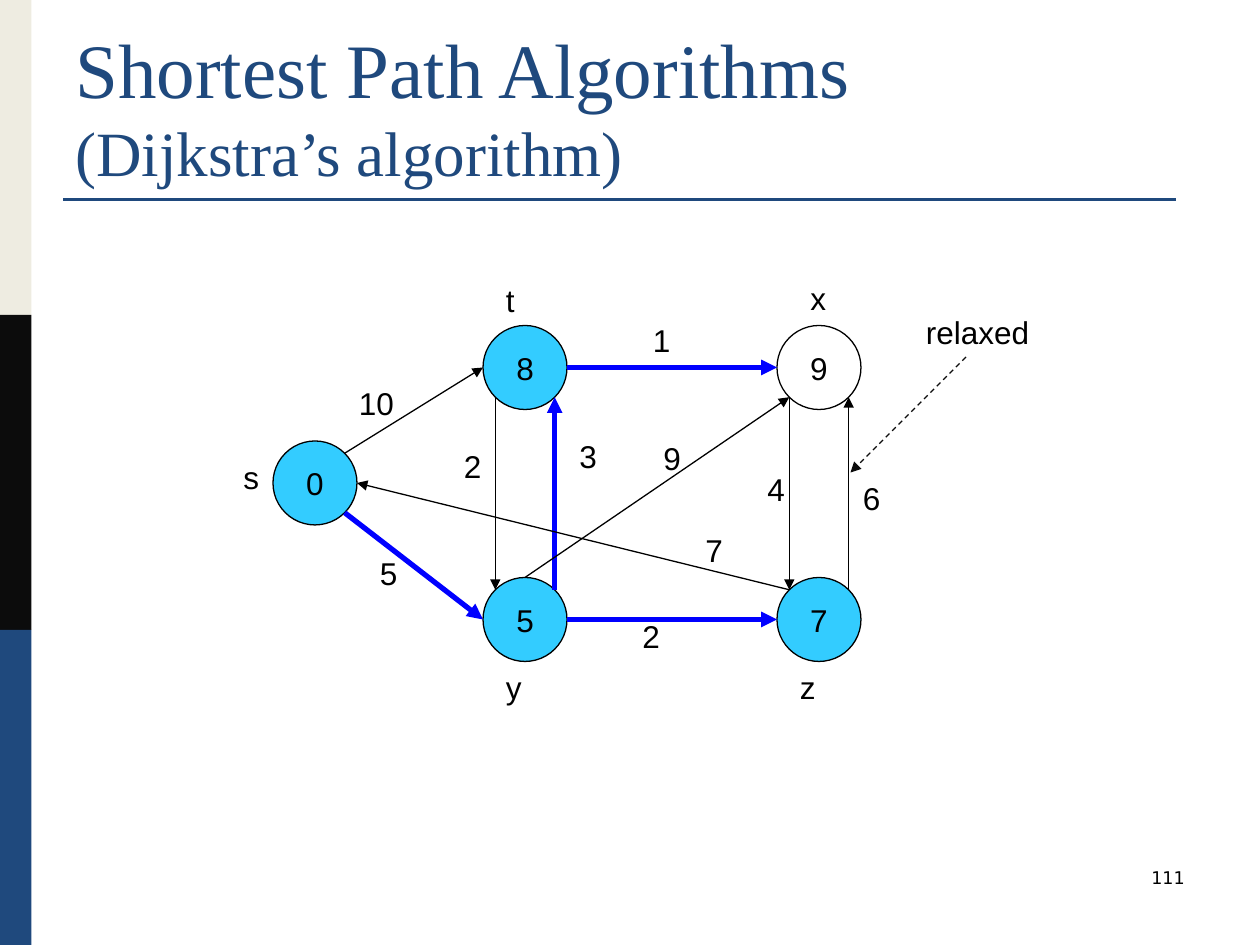
import math

import lxml.etree
import pptx
import pptx.dml.color
import pptx.enum.dml
import pptx.enum.shapes
import pptx.enum.text
import pptx.oxml.ns
import pptx.util

COLORS = {
    "cream": "EEECE1", "ink": "0C0C0C", "navy": "1F497D", "black": "000000",
    "white": "FFFFFF", "visited": "33CCFF", "tree": "0000FF",
}
UNIT = 1 / 12  # one grid step in inches; the page is 120 by 90 steps
RADIUS = 4
ALIGN = pptx.enum.text.PP_ALIGN
ANCHOR = pptx.enum.text.MSO_ANCHOR
SHAPE = pptx.enum.shapes.MSO_SHAPE
ANGLES = {"E": 0, "SE": 45, "S": 90, "SW": 135, "W": 180, "NW": 225, "N": 270, "NE": 315}


def steps(*values):
    return [pptx.util.Inches(value * UNIT) for value in values]


def rgb(name):
    return pptx.dml.color.RGBColor.from_string(COLORS[name])


class GraphSlide:
    def __init__(self, deck, font="Arial", size=18):
        self.font, self.size = font, size
        self.page = deck.slides.add_slide(deck.slide_layouts[6])
        self.centers = {}

    def style(self, para, size=None, font=None, color="black", align=ALIGN.LEFT):
        para.alignment = align
        para.font.name = font or self.font
        para.font.size = pptx.util.Pt(size or self.size)
        para.font.color.rgb = rgb(color)

    def text(self, words, left, top, width, height=4.8, anchor=ANCHOR.TOP, **look):
        box = self.page.shapes.add_textbox(*steps(left, top, width, height))
        box.text_frame.word_wrap = True
        box.text_frame.vertical_anchor = anchor
        para = box.text_frame.paragraphs[0]
        para.text = words
        self.style(para, **look)
        return para

    def shape(self, kind, left, top, width, height, fill, line=None):
        shape = self.page.shapes.add_shape(kind, *steps(left, top, width, height))
        shape.shadow.inherit = False
        shape.fill.solid()
        shape.fill.fore_color.rgb = rgb(fill)
        if line:
            shape.line.color.rgb = rgb(line)
            shape.line.width = pptx.util.Pt(0.75)
        else:
            shape.line.fill.background()
        return shape

    def node(self, name, value, x, y, fill):
        self.centers[name] = (x, y)
        circle = self.shape(SHAPE.OVAL, x - RADIUS, y - RADIUS,
                            2 * RADIUS, 2 * RADIUS, fill, "black")
        frame = circle.text_frame
        frame.word_wrap = False
        frame.vertical_anchor = ANCHOR.MIDDLE
        frame.text = value
        self.style(frame.paragraphs[0], align=ALIGN.CENTER)

    def line(self, start, end, color="black", width=0.75, dashed=False, arrow=True):
        line = self.page.shapes.add_connector(
            pptx.enum.shapes.MSO_CONNECTOR.STRAIGHT, *steps(*start, *end))
        line.line.color.rgb = rgb(color)
        line.line.width = pptx.util.Pt(width)
        if dashed:
            line.line.dash_style = pptx.enum.dml.MSO_LINE.DASH
        if arrow:
            lxml.etree.SubElement(line.line._get_or_add_ln(),
                                  pptx.oxml.ns.qn("a:tailEnd"), type="triangle")
        lxml.etree.SubElement(line._element.spPr, pptx.oxml.ns.qn("a:effectLst"))

    def port(self, name, side):
        """Point on a node's rim, on the given compass side."""
        x, y = self.centers[name]
        angle = math.radians(ANGLES[side])
        return x + RADIUS * math.cos(angle), y + RADIUS * math.sin(angle)

    def edge(self, source, source_side, target, target_side, tree=False):
        self.line(self.port(source, source_side), self.port(target, target_side),
                  "tree" if tree else "black", 3 if tree else 0.75)


def main():
    deck = pptx.Presentation()
    deck.slide_width, deck.slide_height = steps(120, 90)
    slide = GraphSlide(deck)

    # Side bands and title rule
    for row, color in enumerate(("cream", "ink", "navy")):
        slide.shape(SHAPE.RECTANGLE, 0, 30 * row, 3, 30, color)
    slide.line((6, 19), (112, 19), "navy", 1.5, arrow=False)

    # Title, with a smaller second line
    title = slide.text("Shortest Path Algorithms", 6, 3.6, 108, 15, ANCHOR.BOTTOM,
                       size=44, font="Times New Roman", color="navy")
    title.add_line_break()
    subtitle = title.add_run()
    subtitle.text = "(Dijkstra’s algorithm)"
    subtitle.font.size = pptx.util.Pt(36)

    # Nodes: name, distance, centre, fill
    for node in (
        ("s", "0", 30, 46, "visited"),
        ("x", "9", 78, 35, "white"),
        ("t", "8", 50, 35, "visited"),
        ("z", "7", 78, 59, "visited"),
        ("y", "5", 50, 59, "visited"),
    ):
        slide.node(*node)

    # Edges: the tree edges are thick
    for edge in (
        ("s", "NE", "t", "W"),
        ("s", "SE", "y", "W", True),
        ("t", "SW", "y", "NW"),
        ("y", "NE", "t", "SE", True),
        ("t", "E", "x", "W", True),
        ("y", "E", "z", "W", True),
        ("y", "N", "x", "SW"),
        ("x", "SW", "z", "NW"),
        ("z", "NE", "x", "SE"),
        ("z", "NW", "s", "E"),
    ):
        slide.edge(*edge)

    # Edge weights, node names and the note: words, left, top, width
    for label in (
        ("10", 33, 36, 7), ("5", 35, 52.2, 5), ("2", 43, 42, 4), ("3", 54, 41, 4),
        ("9", 62, 41.2, 4), ("2", 60, 58.2, 7), ("6", 81, 45, 6), ("4", 71.9, 44.2, 4),
        ("1", 61, 30, 6), ("7", 66, 50, 5),
        ("s", 22, 43, 5), ("t", 47, 26.2, 5), ("x", 76, 26, 6),
        ("y", 47, 63, 6), ("z", 75, 63, 6),
        ("relaxed", 87, 29.2, 13),
    ):
        slide.text(*label)
    slide.line((92, 34), (81, 45), "ink", dashed=True)

    # Page number
    slide.text("111", 86, 82, 28, 6, size=10, font="DejaVu Sans", align=ALIGN.RIGHT)

    deck.save("out.pptx")


if __name__ == "__main__":
    main()
